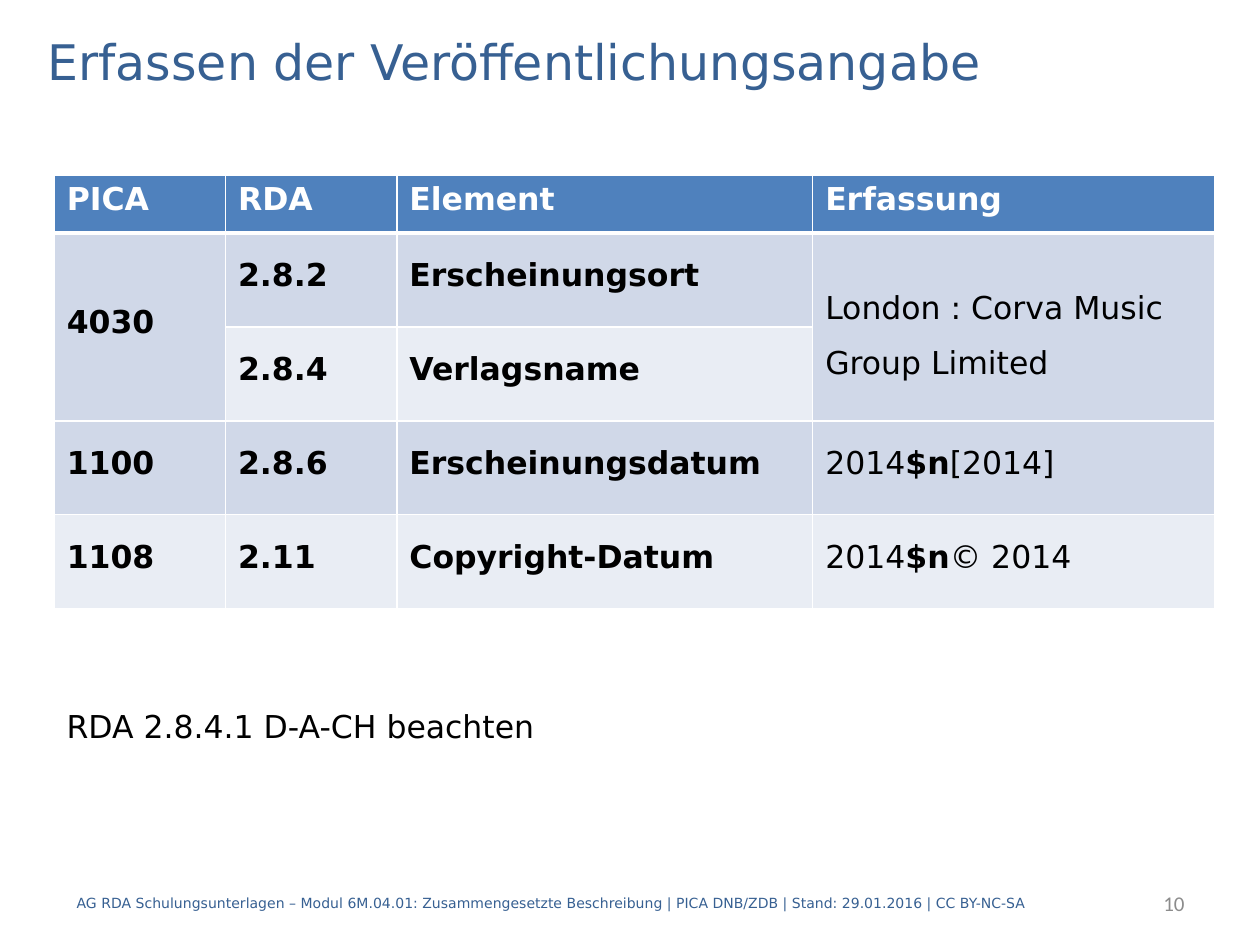
from dataclasses import dataclass

from lxml.etree import SubElement
from pptx import Presentation
from pptx.dml.color import RGBColor
from pptx.enum.text import MSO_ANCHOR, PP_ALIGN
from pptx.oxml.ns import qn
from pptx.util import Inches, Pt


@dataclass(frozen=True)
class Theme:
    font: str = "DejaVu Sans"
    number_font: str = "Calibri"
    blue: str = "376092"
    header: str = "4F81BD"
    bands: tuple = ("D0D8E8", "E9EDF4")
    white: str = "FFFFFF"
    black: str = "000000"
    grey: str = "8C8C8C"
    title: int = 28
    body: int = 18
    number: int = 12
    footer: int = 8


T = Theme()
COLS = (1.36, 1.36, 3.3, 3.19)
ROWS = (0.46,) + (0.745,) * 4
HEADER = ("PICA", "RDA", "Element", "Erfassung")
# The last column lists its runs; every second run is bold.
BODY = (
    ("4030", "2.8.2", "Erscheinungsort", ["London : Corva Music Group Limited"]),
    ("", "2.8.4", "Verlagsname", ""),
    ("1100", "2.8.6", "Erscheinungsdatum", ["2014", "$n", "[2014]"]),
    ("1108", "2.11", "Copyright-Datum", ["2014", "$n", "© 2014"]),
)


def write(tf, text, size=T.body, color=T.black, font=T.font, bold=False,
          align=PP_ALIGN.LEFT, leading=None, space=None):
    """Fill the first paragraph; a list of texts alternates regular and bold."""
    p = tf.paragraphs[0]
    p.alignment = align
    if leading:
        p.line_spacing = leading
    if space:
        p.space_before = p.space_after = Pt(space)
    runs = [(text, bold)] if isinstance(text, str) else [
        (part, i % 2 == 1) for i, part in enumerate(text)]
    for part, is_bold in runs:
        r = p.add_run()
        r.text = part
        r.font.name, r.font.size, r.font.bold = font, Pt(size), is_bold
        r.font.color.rgb = RGBColor.from_string(color)


def add_text(s, x, y, w, h, text, **fmt):
    tf = s.shapes.add_textbox(*map(Inches, (x, y, w, h))).text_frame
    tf.word_wrap = True
    tf.vertical_anchor = MSO_ANCHOR.MIDDLE
    write(tf, text, **fmt)


def style_cell(cell, fill, top=1, bottom=1):
    """Set white borders, widths in points, and then the fill."""
    tc_pr = cell._tc.get_or_add_tcPr()
    for side, width in (("L", 1), ("R", 1), ("T", top), ("B", bottom)):
        ln = SubElement(tc_pr, qn(f"a:ln{side}"), w=str(Pt(width)))
        solid = SubElement(ln, qn("a:solidFill"))
        SubElement(solid, qn("a:srgbClr"), val=T.white)
    cell.fill.solid()
    cell.fill.fore_color.rgb = RGBColor.from_string(fill)


def add_header(table):
    for cell, text in zip(table.rows[0].cells, HEADER):
        style_cell(cell, T.header, bottom=3)
        write(cell.text_frame, text, color=T.white, bold=True)


def add_body(table):
    for i, row in enumerate(BODY):
        for cell, text in zip(table.rows[i + 1].cells, row):
            style_cell(cell, T.bands[i % 2], top=1 if i else 3)
            cell.vertical_anchor = MSO_ANCHOR.MIDDLE
            if text:
                wraps = isinstance(text, list) and len(text) == 1
                write(cell.text_frame, text, bold=True, space=6,
                      leading=1.5 if wraps else Pt(16))
    for col in (0, 3):
        table.cell(1, col).merge(table.cell(2, col))


def add_grid(s, x, y):
    table = s.shapes.add_table(len(ROWS), len(COLS), Inches(x), Inches(y),
                               Inches(sum(COLS)), Inches(sum(ROWS))).table
    for column, width in zip(table.columns, COLS):
        column.width = Inches(width)
    for row, height in zip(table.rows, ROWS):
        row.height = Inches(height)
    add_header(table)
    add_body(table)


def main():
    prs = Presentation()
    prs.slide_width, prs.slide_height = Inches(10), Inches(7.5)
    s = prs.slides.add_slide(prs.slide_layouts[6])
    add_text(s, 7.91, 6.97, 1.59, 0.4, "10", size=T.number, color=T.grey,
             font=T.number_font, align=PP_ALIGN.RIGHT)
    add_grid(s, 0.43, 1.39)
    add_text(s, 0.28, 0.2, 9.45, 0.56, "Erfassen der Veröffentlichungsangabe",
             size=T.title, color=T.blue)
    add_text(s, 0.43, 5.48, 9.45, 0.56, "RDA 2.8.4.1 D-A-CH beachten")
    add_text(s, 0.51, 6.97, 8.74, 0.4,
             "AG RDA Schulungsunterlagen – Modul 6M.04.01: Zusammengesetzte "
             "Beschreibung | PICA DNB/ZDB | Stand: 29.01.2016 | CC BY-NC-SA",
             size=T.footer, color=T.blue)
    prs.save("out.pptx")


if __name__ == "__main__":
    main()
